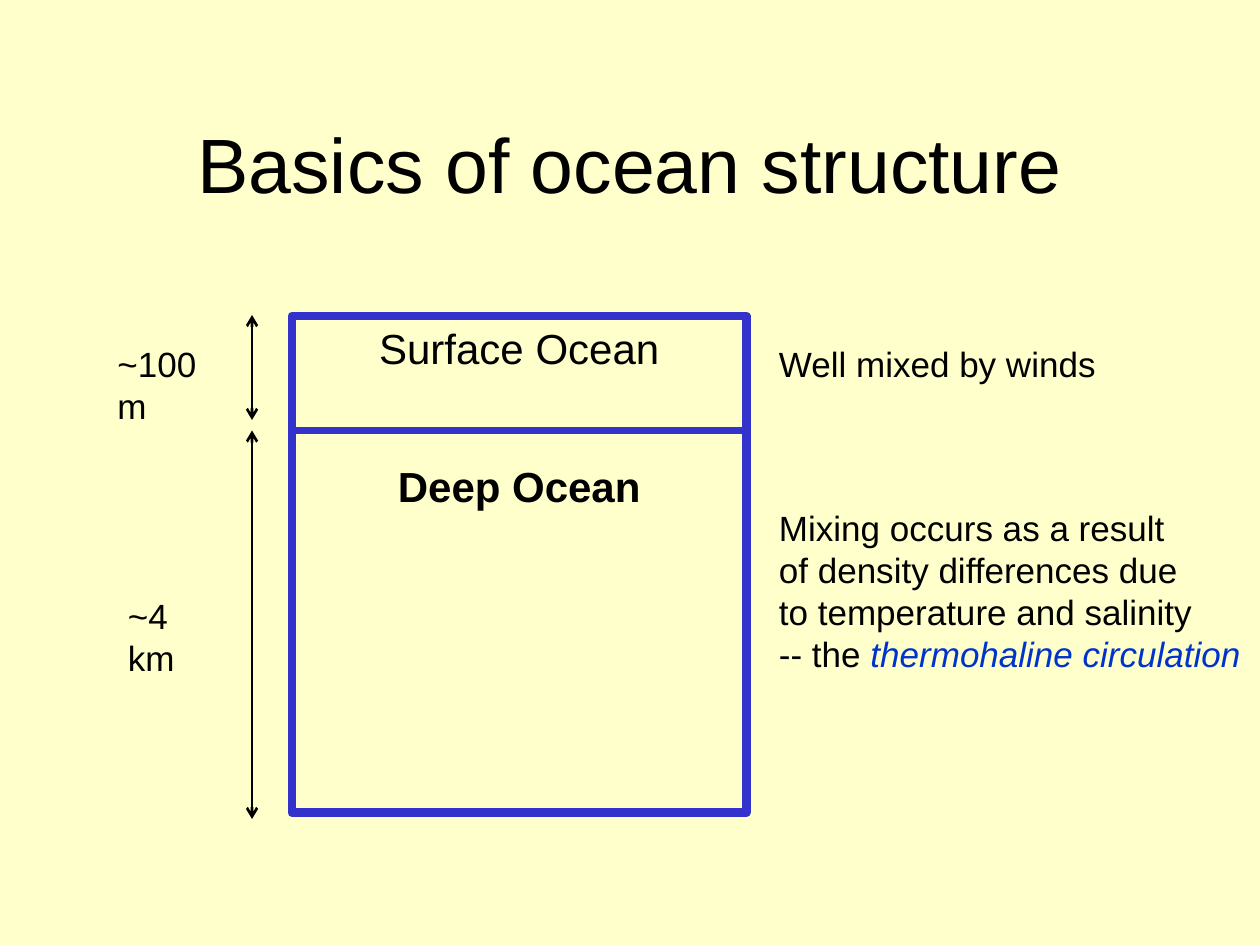
from pptx import Presentation
from pptx.dml.color import RGBColor
from pptx.enum.shapes import MSO_CONNECTOR, MSO_SHAPE
from pptx.enum.text import MSO_ANCHOR, MSO_AUTO_SIZE, PP_ALIGN
from pptx.oxml.ns import qn
from pptx.util import Inches, Pt
from lxml.etree import SubElement

COLORS = {"background": "FFFFCC", "ocean": "3333CC", "ink": "000000", "term": "0033CC"}
FONT = "Arial"
WIDTH, HEIGHT = Inches(10), Inches(7.5)
COLUMNS, ROWS = 120, 90
DEPTH_COLUMN, NOTE_COLUMN = 24, 73
SURFACE_ROW, DIVIDER_ROW, FLOOR_ROW = 30, 41, 78
LABEL_ROW = 32


def color(name):
    return RGBColor.from_string(COLORS[name])


def across(columns):
    return round(WIDTH * columns / COLUMNS)


def down(rows):
    return round(HEIGHT * rows / ROWS)


def place(column, row, columns, rows):
    return across(column), down(row), across(columns), down(rows)


def style_run(run, size, ink="ink", bold=False, italic=False):
    run.font.name = FONT
    run.font.size = Pt(size)
    run.font.bold = bold
    run.font.italic = italic
    run.font.color.rgb = color(ink)


def write_lines(frame, lines, size, align=PP_ALIGN.LEFT):
    frame.text = "\n".join(lines)
    for paragraph in frame.paragraphs:
        paragraph.alignment = align
        for run in paragraph.runs:
            style_run(run, size)


def add_label(slide, grid_area, lines):
    label = slide.shapes.add_textbox(*place(*grid_area))
    frame = label.text_frame
    frame.word_wrap = False
    frame.auto_size = MSO_AUTO_SIZE.SHAPE_TO_FIT_TEXT
    write_lines(frame, lines, 20)
    return frame


def add_title(slide, wording):
    frame = slide.shapes.add_textbox(*place(9, 8, 102, 15)).text_frame
    frame.word_wrap = True
    frame.vertical_anchor = MSO_ANCHOR.MIDDLE
    write_lines(frame, [wording], 44, PP_ALIGN.CENTER)


def add_ocean(slide):
    ocean = slide.shapes.add_shape(MSO_SHAPE.RECTANGLE, *place(27.8, 30.1, 43.3, 47.3))
    ocean.shadow.inherit = False
    ocean.fill.background()
    ocean.line.color.rgb = color("ocean")
    ocean.line.width = Pt(5)
    frame = ocean.text_frame
    frame.word_wrap = True
    frame.vertical_anchor = MSO_ANCHOR.TOP
    write_lines(frame, ["Surface Ocean", "Deep Ocean"], 24, PP_ALIGN.CENTER)
    deep = frame.paragraphs[1]
    deep.space_before = Pt(50)
    deep.runs[0].font.bold = True


def add_line(slide, start, end, ink, weight):
    line = slide.shapes.add_connector(
        MSO_CONNECTOR.STRAIGHT,
        across(start[0]), down(start[1]), across(end[0]), down(end[1]),
    )
    line.line.color.rgb = color(ink)
    line.line.width = Pt(weight)
    SubElement(line._element.spPr, qn("a:effectLst"))
    return line


def add_depth_arrow(slide, top, bottom):
    arrow = add_line(slide, (DEPTH_COLUMN, top), (DEPTH_COLUMN, bottom), "ink", 1.5)
    outline = arrow.line._get_or_add_ln()
    for tip in ("a:headEnd", "a:tailEnd"):
        SubElement(outline, qn(tip), type="arrow")


def add_mixing_note(slide):
    note = add_label(slide, (NOTE_COLUMN, 47.6, 46.7, 17.4), [
        "Mixing occurs as a result",
        "of density differences due",
        "to temperature and salinity",
        "-- the ",
    ])
    term = note.paragraphs[-1].add_run()
    term.text = "thermohaline circulation"
    style_run(term, 20, "term", italic=True)


def main():
    deck = Presentation()
    deck.slide_width, deck.slide_height = WIDTH, HEIGHT
    slide = deck.slides.add_slide(deck.slide_layouts[6])
    slide.background.fill.solid()
    slide.background.fill.fore_color.rgb = color("background")

    add_ocean(slide)
    add_line(slide, (28, DIVIDER_ROW), (71, DIVIDER_ROW), "ocean", 4.5)
    add_label(slide, (10, LABEL_ROW, 13.5, 5.2), ["~100 m"])
    add_depth_arrow(slide, SURFACE_ROW, DIVIDER_ROW - 1)
    add_label(slide, (11, 56, 11.5, 5.2), ["~4 km"])
    add_depth_arrow(slide, DIVIDER_ROW, FLOOR_ROW)
    add_label(slide, (NOTE_COLUMN, LABEL_ROW, 32.9, 5.2), ["Well mixed by winds"])
    add_mixing_note(slide)
    add_title(slide, "Basics of ocean structure")
    deck.save("out.pptx")


if __name__ == "__main__":
    main()
